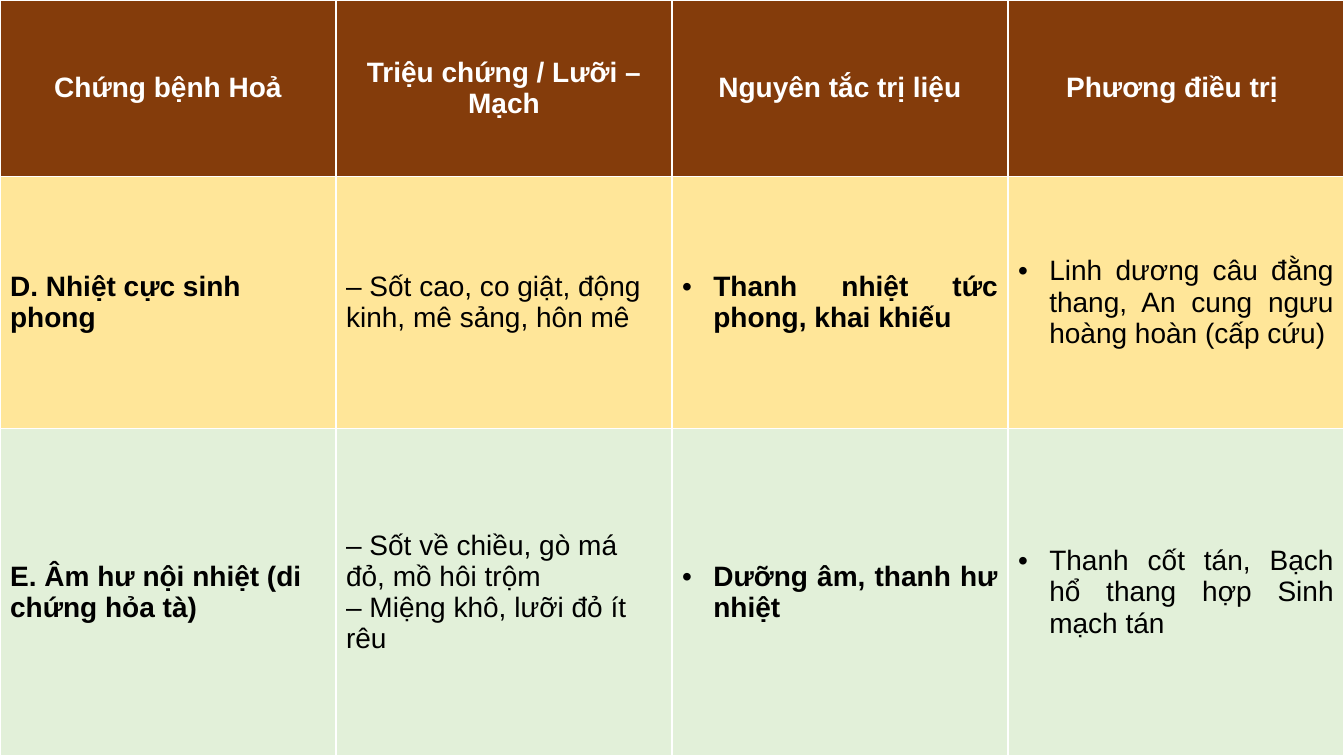
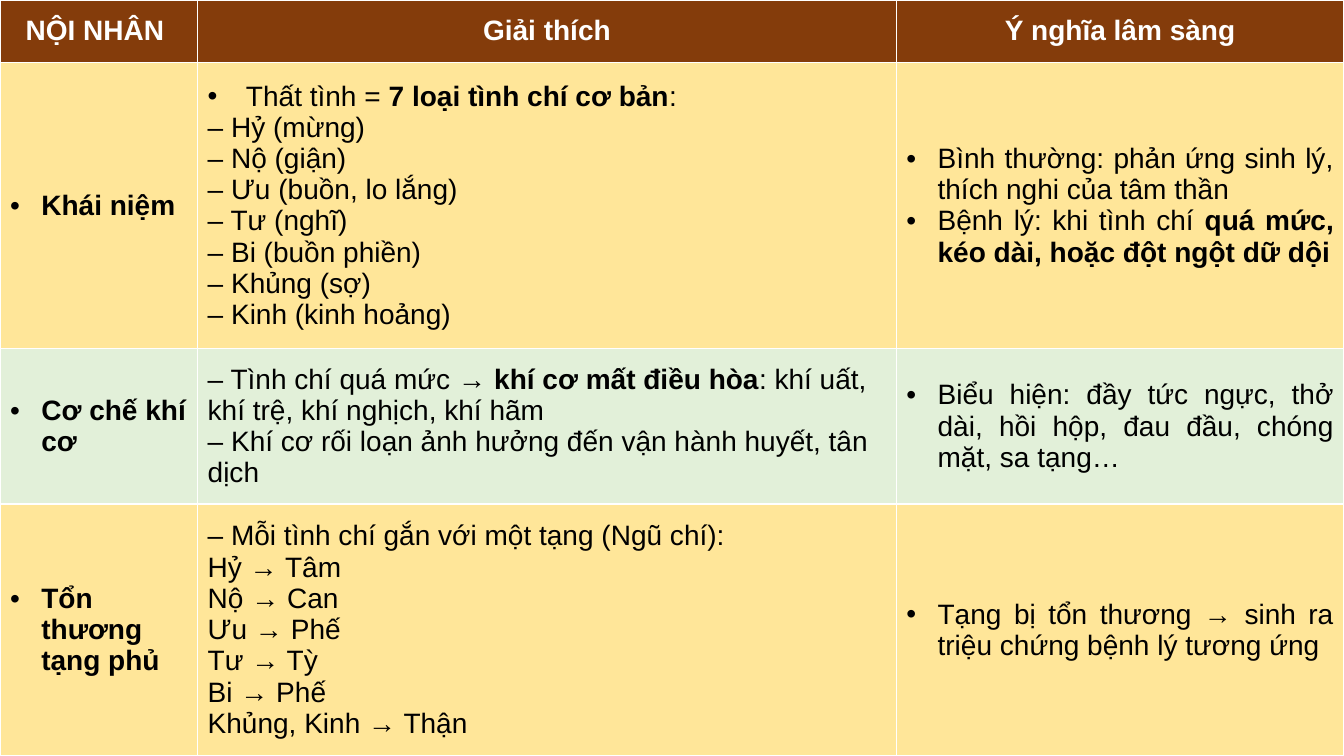
from dataclasses import dataclass

import lxml.etree
import pptx
import pptx.dml.color
import pptx.enum.text
import pptx.oxml.ns
import pptx.util

Inches = pptx.util.Inches
Align = pptx.enum.text.PP_ALIGN

BROWN = pptx.dml.color.RGBColor(0x84, 0x3C, 0x0B)
YELLOW = pptx.dml.color.RGBColor(0xFF, 0xE6, 0x99)
GREEN = pptx.dml.color.RGBColor(0xE2, 0xF0, 0xD9)
WHITE = pptx.dml.color.RGBColor(0xFF, 0xFF, 0xFF)
BLACK = pptx.dml.color.RGBColor(0, 0, 0)

FONT = "Arial"
FONT_SIZE = pptx.util.Pt(20)
WIDTH, HEIGHT = 13.33, 7.5
BULLET_INDENT = 0.31


@dataclass
class Line:
    """One paragraph; text between ** marks is bold."""
    text: str
    align: Align = Align.LEFT
    indent: float = 0


@dataclass
class TableSlide:
    column_widths: list[float]
    row_heights: list[float]
    headers: list[str]
    rows: list[list[list[Line]]]


def plain(*texts: str) -> list[Line]:
    return [Line(text) for text in texts]


def bullets(*texts: str, align: Align = Align.JUSTIFY, indent: float = BULLET_INDENT) -> list[Line]:
    return [Line(text, align, indent) for text in texts]


def add_bullet(para, indent: float) -> None:
    properties = para._p.get_or_add_pPr()
    properties.set("marL", str(Inches(indent)))
    properties.set("indent", str(-Inches(indent)))
    font = lxml.etree.SubElement(properties, pptx.oxml.ns.qn("a:buFont"))
    font.set("typeface", FONT)
    mark = lxml.etree.SubElement(properties, pptx.oxml.ns.qn("a:buChar"))
    mark.set("char", "•")


def fill_cell(cell, lines: list[Line], fill, color) -> None:
    cell.fill.solid()
    cell.fill.fore_color.rgb = fill
    cell.vertical_anchor = pptx.enum.text.MSO_ANCHOR.MIDDLE
    frame = cell.text_frame
    for index, line in enumerate(lines):
        para = frame.add_paragraph() if index else frame.paragraphs[0]
        para.alignment = line.align
        if line.indent:
            add_bullet(para, line.indent)
        para.font.name = FONT
        para.font.size = FONT_SIZE
        para.font.color.rgb = color
        for part, text in enumerate(line.text.split("**")):
            if text:
                span = para.add_run()
                span.text = text
                span.font.bold = part % 2 == 1


def add_table_slide(deck, content: TableSlide) -> None:
    page = deck.slides.add_slide(deck.slide_layouts[6])
    # The default table style supplies the white borders and heavy header rule
    table = page.shapes.add_table(
        len(content.row_heights), len(content.column_widths),
        0, 0, Inches(WIDTH), Inches(HEIGHT)).table
    table.horz_banding = False
    for column, width in zip(table.columns, content.column_widths):
        column.width = Inches(width)
    for row, height in zip(table.rows, content.row_heights):
        row.height = Inches(height)

    # Header row
    for cell, header in zip(table.rows[0].cells, content.headers):
        fill_cell(cell, [Line(f"**{header}**", Align.CENTER)], BROWN, WHITE)

    # Body rows in alternating colours
    for number, row in enumerate(content.rows):
        fill = GREEN if number % 2 else YELLOW
        for cell, lines in zip(table.rows[number + 1].cells, row):
            fill_cell(cell, lines, fill, BLACK)


FIRE_DISEASES = TableSlide(
    column_widths=[WIDTH / 4] * 4,
    row_heights=[1.75, 2.5, 3.25],
    headers=["Chứng bệnh Hoả", "Triệu chứng / Lưỡi – Mạch",
             "Nguyên tắc trị liệu", "Phương điều trị "],
    rows=[
        [plain("**D. Nhiệt cực sinh phong**"),
         plain("– Sốt cao, co giật, động kinh, mê sảng, hôn mê"),
         bullets("**Thanh nhiệt tức phong, khai khiếu**"),
         bullets("Linh dương câu đằng thang, An cung ngưu hoàng hoàn (cấp cứu)")],
        [plain("**E. Âm hư nội nhiệt (di chứng hỏa tà)**"),
         plain("– Sốt về chiều, gò má đỏ, mồ hôi trộm",
               "– Miệng khô, lưỡi đỏ ít rêu"),
         bullets("**Dưỡng âm, thanh hư nhiệt**"),
         bullets("Thanh cốt tán, Bạch hổ thang hợp Sinh mạch tán")],
    ],
)

INTERNAL_CAUSES = TableSlide(
    column_widths=[1.96, 6.93, 4.44],
    row_heights=[0.62, 2.84, 1.54, 2.5],
    headers=["NỘI NHÂN ", "Giải thích", "Ý nghĩa lâm sàng"],
    rows=[
        [bullets("**Khái niệm**", align=Align.LEFT),
         bullets("Thất tình = **7 loại tình chí cơ bản**:", align=Align.LEFT, indent=0.38)
         + plain("– Hỷ (mừng)", "– Nộ (giận)", "– Ưu (buồn, lo lắng)", "– Tư (nghĩ)",
                 "– Bi (buồn phiền)", "– Khủng (sợ)", "– Kinh (kinh hoảng)"),
         bullets("Bình thường: phản ứng sinh lý, thích nghi của tâm thần",
                 "Bệnh lý: khi tình chí **quá mức, kéo dài, hoặc đột ngột dữ dội**")],
        [bullets("**Cơ chế khí cơ**", align=Align.LEFT),
         plain("– Tình chí quá mức → **khí cơ mất điều hòa**: "
               "khí uất, khí trệ, khí nghịch, khí hãm",
               "– Khí cơ rối loạn ảnh hưởng đến vận hành huyết, tân dịch"),
         bullets("Biểu hiện: đầy tức ngực, thở dài, hồi hộp, đau đầu, "
                 "chóng mặt, sa tạng…")],
        [bullets("**Tổn thương tạng phủ**", align=Align.LEFT),
         plain("– Mỗi tình chí gắn với một tạng (Ngũ chí):", "Hỷ → Tâm", "Nộ → Can",
               "Ưu → Phế", "Tư → Tỳ", "Bi → Phế", "Khủng, Kinh → Thận"),
         bullets("Tạng bị tổn thương → sinh ra triệu chứng bệnh lý tương ứng")],
    ],
)


def main() -> None:
    deck = pptx.Presentation()
    deck.slide_width = Inches(WIDTH)
    deck.slide_height = Inches(HEIGHT)
    for content in (FIRE_DISEASES, INTERNAL_CAUSES):
        add_table_slide(deck, content)
    deck.save("out.pptx")


if __name__ == "__main__":
    main()
